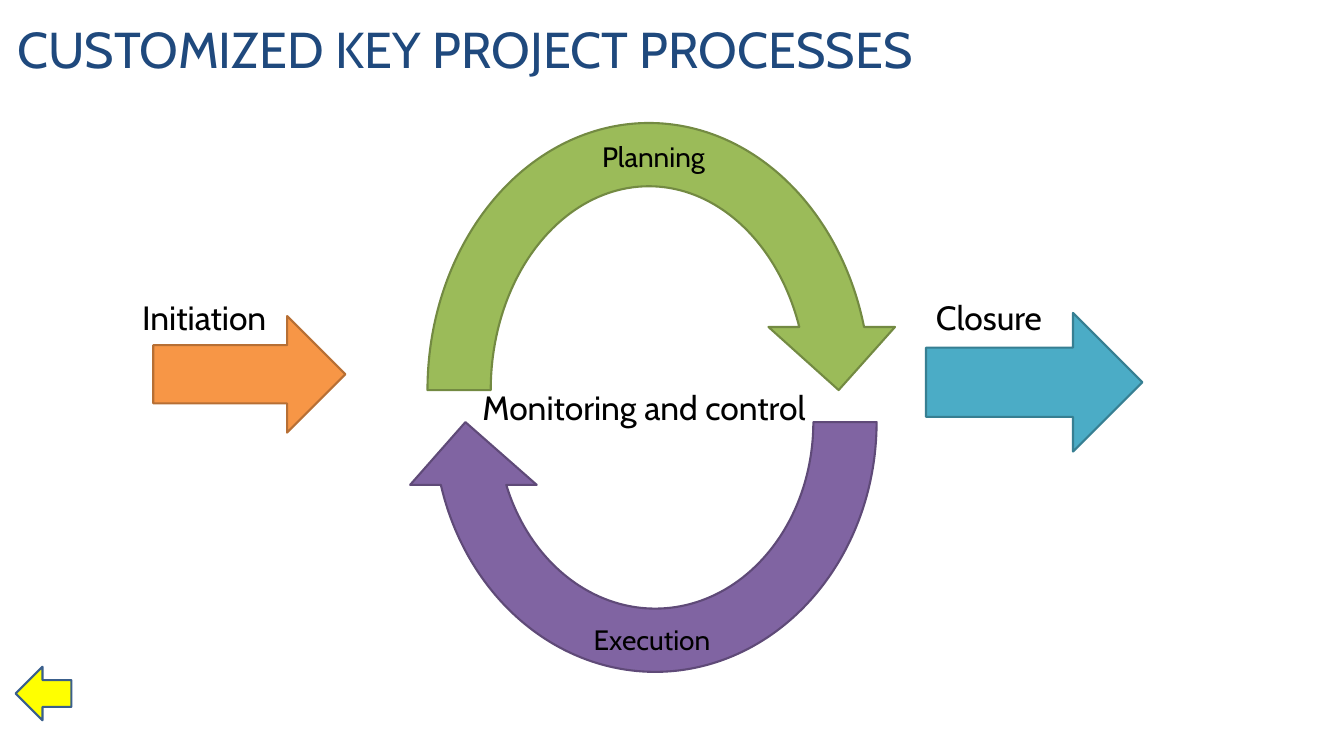
from dataclasses import dataclass

from pptx import Presentation
from pptx.dml.color import RGBColor
from pptx.enum.shapes import MSO_SHAPE
from pptx.enum.text import MSO_ANCHOR, MSO_AUTO_SIZE, PP_ALIGN
from pptx.util import Emu, Pt

LEFT_ARROW = MSO_SHAPE.LEFT_ARROW
RIGHT_ARROW = MSO_SHAPE.RIGHT_ARROW
CIRCULAR_ARROW = MSO_SHAPE.CIRCULAR_ARROW
TOP = MSO_ANCHOR.TOP
LEFT = PP_ALIGN.LEFT
FIT_SHAPE = MSO_AUTO_SIZE.SHAPE_TO_FIT_TEXT

EMU_PER_PX = 9525  # 96 px to the inch


@dataclass(frozen=True)
class Theme:
    font: str = "Cabin"
    title: str = "1F497D"
    text: str = "000000"
    # fill and outline of each arrow
    back: tuple = ("FFFF00", "3A5F8C")
    planning: tuple = ("9BBB59", "738A42")
    execution: tuple = ("8064A2", "5F4A78")
    initiation: tuple = ("F79646", "B76F34")
    closure: tuple = ("4BACC6", "377F92")
    title_size: int = 36
    label_size: int = 24
    phase_size: int = 20
    outline: float = 1.5


def px(n):
    return Emu(n * EMU_PER_PX)


class SlideBuilder:
    def __init__(self, slide, theme):
        self.slide = slide
        self.theme = theme

    def _text(self, text, box, size, color):
        sp = self.slide.shapes.add_textbox(*map(px, box))
        tf = sp.text_frame
        tf.text = text
        tf.vertical_anchor = TOP
        p = tf.paragraphs[0]
        p.alignment = LEFT
        font = p.runs[0].font
        font.name = self.theme.font
        font.size = Pt(size)
        font.color.rgb = RGBColor.from_string(color)
        return tf

    def title(self, text, box):
        tf = self._text(text, box, self.theme.title_size, self.theme.title)
        tf.word_wrap = True
        tf.margin_top = px(7)

    def label(self, text, box, size):
        tf = self._text(text, box, size, self.theme.text)
        tf.word_wrap = False
        tf.auto_size = FIT_SHAPE

    def arrow(self, kind, box, colors, rotation=0):
        sp = self.slide.shapes.add_shape(kind, *map(px, box))
        fill, line = map(RGBColor.from_string, colors)
        sp.rotation = rotation
        sp.shadow.inherit = False
        sp.fill.solid()
        sp.fill.fore_color.rgb = fill
        sp.line.color.rgb = line
        sp.line.width = Pt(self.theme.outline)


def main():
    prs = Presentation()
    prs.slide_width, prs.slide_height = px(1280), px(720)
    theme = Theme()
    s = SlideBuilder(prs.slides.add_slide(prs.slide_layouts[6]), theme)

    s.title("CUSTOMIZED KEY PROJECT PROCESSES", (7, 10, 1104, 87))

    s.arrow(LEFT_ARROW, (15, 635, 53, 51), theme.back)
    s.arrow(CIRCULAR_ARROW, (377, 87, 482, 569), theme.planning)
    s.arrow(CIRCULAR_ARROW, (383, 134, 482, 536), theme.execution, rotation=180)
    s.arrow(RIGHT_ARROW, (146, 301, 183, 111), theme.initiation)
    s.arrow(RIGHT_ARROW, (882, 298, 206, 132), theme.closure)

    s.label("Monitoring and control", (450, 364, 348, 48), theme.label_size)
    s.label("Initiation", (126, 278, 152, 48), theme.label_size)
    s.label("Closure", (882, 278, 127, 48), theme.label_size)
    s.label("Planning", (564, 128, 122, 42), theme.phase_size)
    s.label("Execution", (556, 588, 137, 42), theme.phase_size)

    prs.save("out.pptx")


if __name__ == "__main__":
    main()
